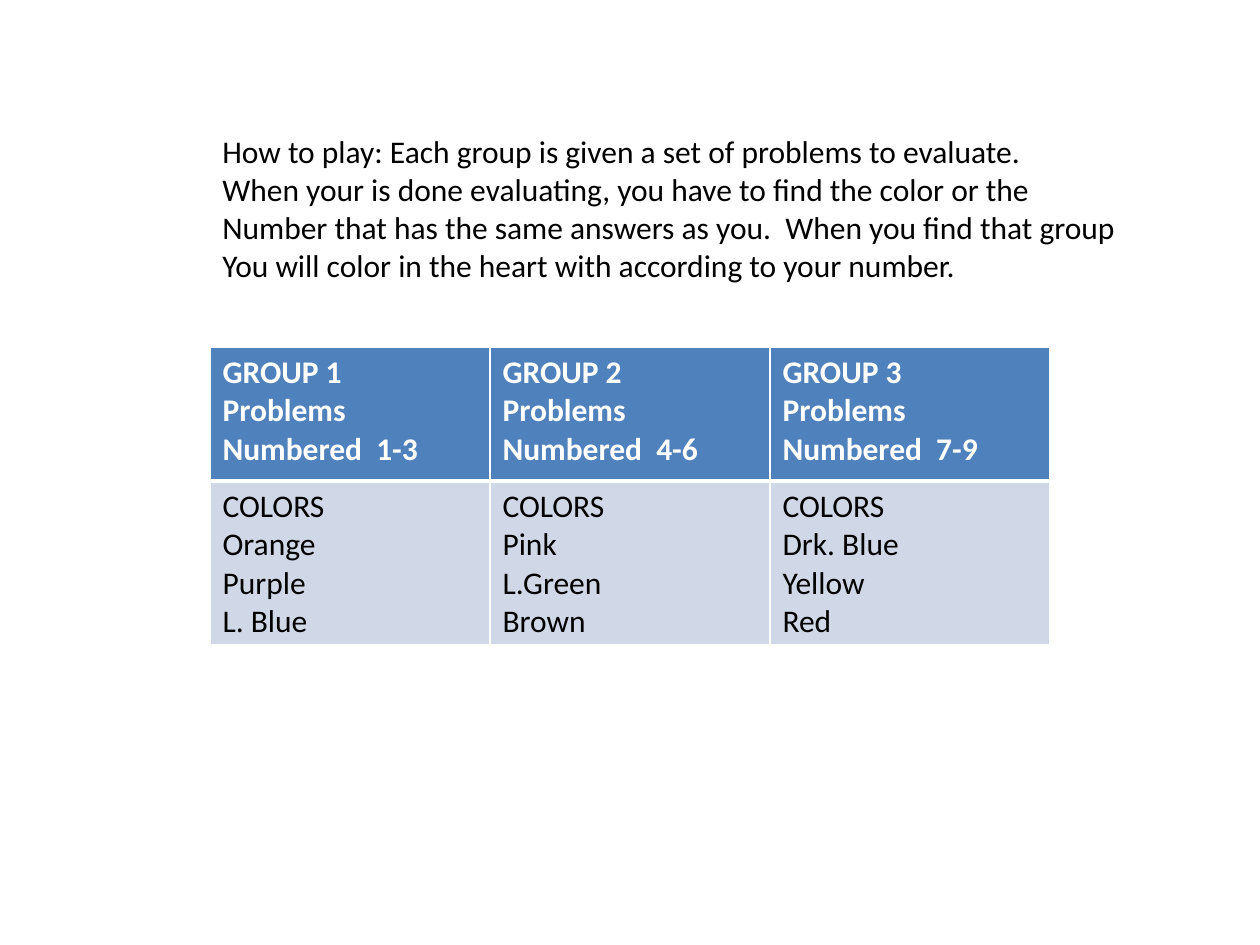
from pptx import Presentation
from pptx.dml.color import RGBColor
from pptx.enum.text import MSO_AUTO_SIZE
from pptx.oxml import parse_xml
from pptx.oxml.ns import nsdecls
from pptx.util import Pt

# Content
INSTRUCTIONS = [
    "How to play: Each group is given a set of problems to evaluate.",
    "When your is done evaluating, you have to find the color or the",
    "Number that has the same answers as you.  When you find that group",
    "You will color in the heart with according to your number.",
]
GROUPS = [
    ("1-3", ["Orange", "Purple", "L. Blue"]),
    ("4-6", ["Pink", "L.Green", "Brown"]),
    ("7-9", ["Drk. Blue", "Yellow", "Red"]),
]

# Layout in px, 126 to the inch
SLIDE_W, SLIDE_H = 1260, 945
LEFT = 210
INSTRUCTIONS_TOP, INSTRUCTIONS_W, INSTRUCTIONS_H = 126, 930, 204
TABLE_TOP, COLUMN_W = 347, 280
ROW_HEIGHTS = [134, 163]
BLACK, WHITE, HEADER_BLUE, BODY_BLUE = "000000", "FFFFFF", "4F81BD", "D0D8E8"


def emu(px):
    return round(px * 914400 / 126)


def color(value):
    return RGBColor.from_string(value)


def write(frame, lines, ink, bold=False):
    for index, line in enumerate(lines):
        paragraph = frame.paragraphs[0] if index == 0 else frame.add_paragraph()
        run = paragraph.add_run()
        run.text = line
        run.font.name = "Calibri"
        run.font.size = Pt(18)
        run.font.bold = bold
        run.font.color.rgb = color(ink)


def add_borders(cell, widths):
    properties = cell._tc.get_or_add_tcPr()
    for index, (side, width) in enumerate(widths.items()):
        properties.insert(index, parse_xml(
            f'<a:ln{side} {nsdecls("a")} w="{Pt(width)}"><a:solidFill>'
            f'<a:srgbClr val="{WHITE}"/></a:solidFill></a:ln{side}>'))


prs = Presentation()
prs.slide_width, prs.slide_height = emu(SLIDE_W), emu(SLIDE_H)
slide = prs.slides.add_slide(prs.slide_layouts[6])

# Instructions
instructions = slide.shapes.add_textbox(
    emu(LEFT), emu(INSTRUCTIONS_TOP), emu(INSTRUCTIONS_W), emu(INSTRUCTIONS_H)).text_frame
instructions.word_wrap = False
instructions.auto_size = MSO_AUTO_SIZE.SHAPE_TO_FIT_TEXT
write(instructions, INSTRUCTIONS, BLACK)

# Group table
table = slide.shapes.add_table(
    len(ROW_HEIGHTS), len(GROUPS), emu(LEFT), emu(TABLE_TOP),
    emu(COLUMN_W * len(GROUPS)), emu(sum(ROW_HEIGHTS))).table
for row, height in zip(table.rows, ROW_HEIGHTS):
    row.height = emu(height)

for column, (numbers, colors) in enumerate(GROUPS):
    table.columns[column].width = emu(COLUMN_W)
    header, body = table.cell(0, column), table.cell(1, column)
    write(header.text_frame,
          [f"GROUP {column + 1}", f"Problems Numbered  {numbers}"], WHITE, bold=True)
    write(body.text_frame, ["COLORS", *colors], BLACK)
    for cell, fill, top, bottom in ((header, HEADER_BLUE, 1, 3), (body, BODY_BLUE, 3, 1)):
        cell.fill.solid()
        cell.fill.fore_color.rgb = color(fill)
        add_borders(cell, {"L": 1, "R": 1, "T": top, "B": bottom})

prs.save("out.pptx")
